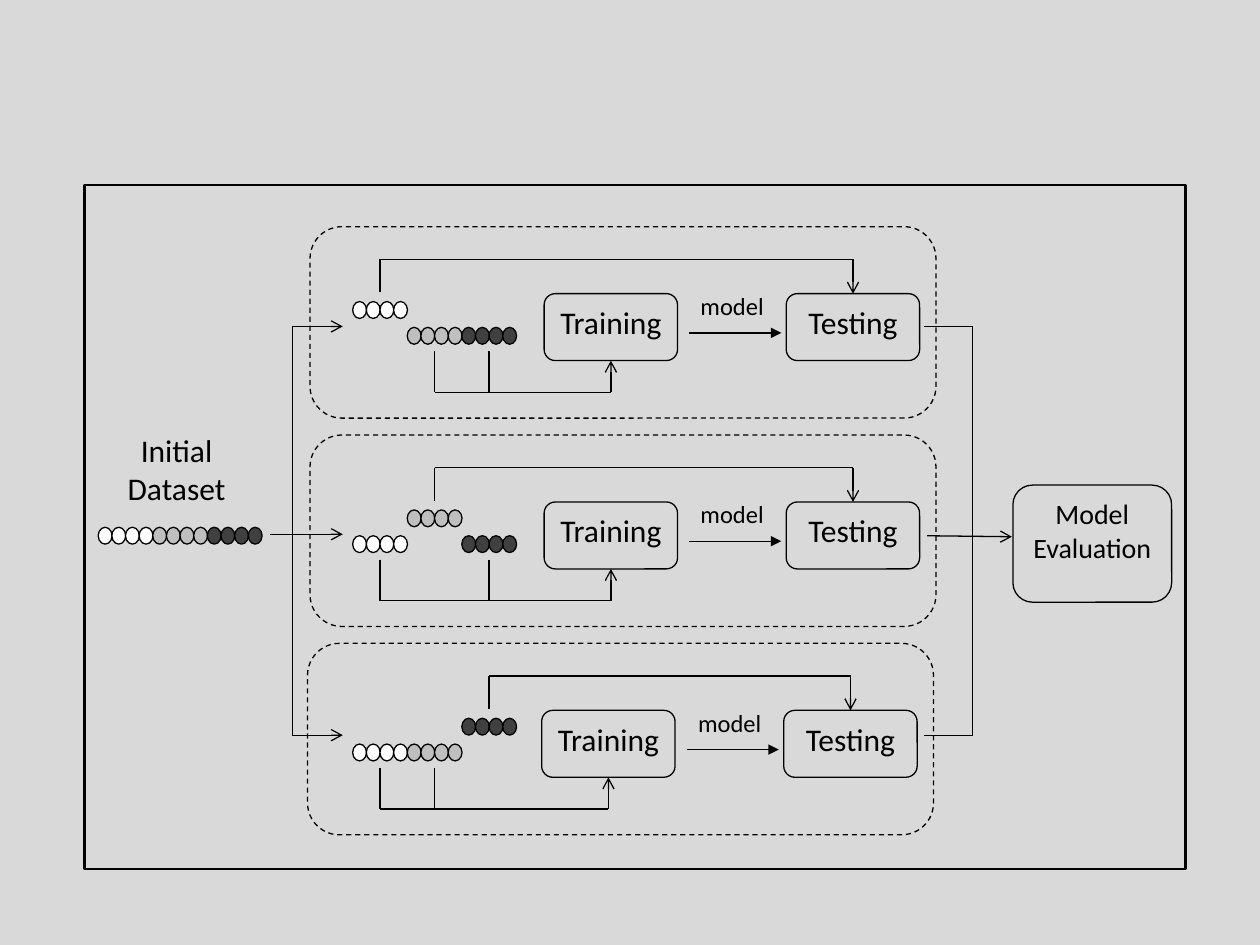
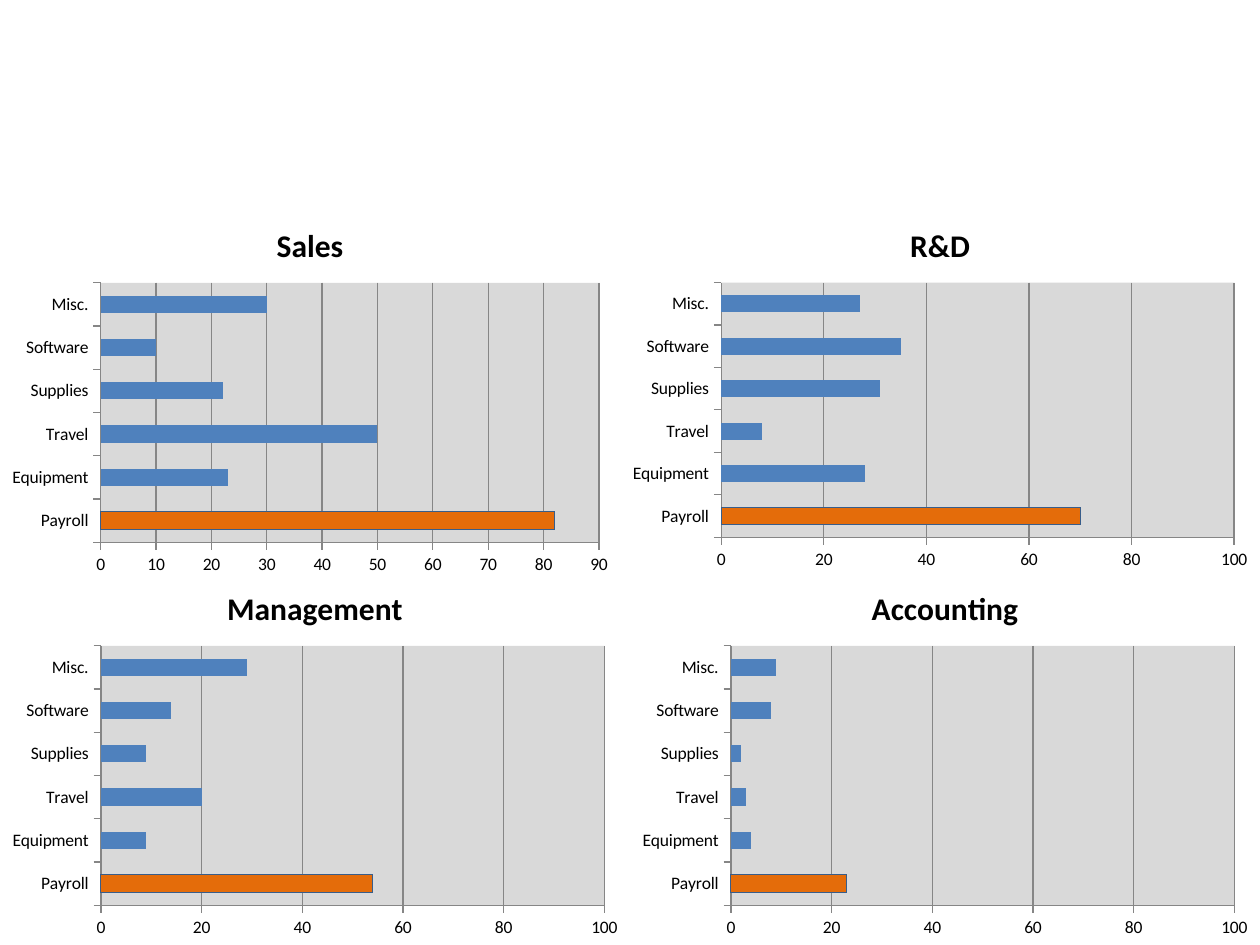
"""Build two slides: a three-fold cross-validation diagram and four budget bar charts."""
from dataclasses import dataclass
from typing import NamedTuple, Optional

from lxml import etree
from pptx import Presentation
from pptx import util as u
from pptx.chart.data import CategoryChartData
from pptx.dml.color import RGBColor
from pptx.enum import chart as charts
from pptx.enum import dml, shapes, text
from pptx.oxml.ns import qn


@dataclass(frozen=True)
class Theme:
    font: str = "Calibri"
    ink: RGBColor = RGBColor(0x00, 0x00, 0x00)
    paper: RGBColor = RGBColor(0xFF, 0xFF, 0xFF)
    panel: RGBColor = RGBColor(0xD9, 0xD9, 0xD9)
    silver: RGBColor = RGBColor(0xBF, 0xBF, 0xBF)
    charcoal: RGBColor = RGBColor(0x40, 0x40, 0x40)
    grid: RGBColor = RGBColor(0x86, 0x86, 0x86)
    bar: RGBColor = RGBColor(0x4F, 0x81, 0xBD)
    highlight: RGBColor = RGBColor(0xE4, 0x6C, 0x0A)
    highlight_edge: RGBColor = RGBColor(0x38, 0x5D, 0x8A)
    large: int = 18
    medium: int = 16
    small: int = 14
    axis: int = 10
    thin: float = 0.75
    thick: float = 1.5


class Box(NamedTuple):
    left: float
    top: float
    width: float
    height: float

    def lengths(self) -> list:
        return [u.Cm(value) for value in self]


class Fold(NamedTuple):
    held_out: int
    top: float
    shift: float


class Budget(NamedTuple):
    department: str
    box: Box
    values: tuple
    maximum: Optional[int] = 100


THEME = Theme()
BEAD_COLORS = (THEME.paper, THEME.silver, THEME.charcoal)
BEADS_PER_GROUP = 4
GROUP_PITCH = 1.1
BEAD_WIDTH, BEAD_HEIGHT = 0.28, 0.34
FOLD_BEADS_LEFT = 7.11
FOLD_TOP, FOLD_PITCH = 4.57, 4.2
FOLDS = [Fold(index, FOLD_TOP + index * FOLD_PITCH, shift)
         for index, shift in enumerate((0, 0, -0.05))]
CATEGORIES = ("Payroll", "Equipment", "Travel", "Supplies", "Software", "Misc.")
BUDGETS = (
    Budget("Sales", Box(0, 4.11, 12.5, 7.62), (82, 23, 50, 22, 10, 30), None),
    Budget("R&D", Box(12.5, 4.11, 12.9, 7.52), (70, 28, 8, 31, 35, 27)),
    Budget("Management", Box(0, 11.43, 12.7, 7.62), (54, 9, 20, 9, 14, 29)),
    Budget("Accounting", Box(12.7, 11.43, 12.7, 7.62), (23, 4, 3, 2, 8, 9)),
)


def add_slide(presentation, background: RGBColor):
    """Add a blank slide with a plain background."""
    slide = presentation.slides.add_slide(presentation.slide_layouts[6])
    slide.background.fill.solid()
    slide.background.fill.fore_color.rgb = background
    return slide


def set_text(shape, wording: str, size: int) -> None:
    """Put centred text at the top of a shape."""
    frame = shape.text_frame
    frame.text = wording
    frame.word_wrap = True
    frame.vertical_anchor = text.MSO_ANCHOR.TOP
    paragraph = frame.paragraphs[0]
    paragraph.alignment = text.PP_ALIGN.CENTER
    font = paragraph.runs[0].font
    font.name, font.size, font.color.rgb = THEME.font, u.Pt(size), THEME.ink


def add_outline(slide, kind, box: Box, fill: Optional[RGBColor] = None,
                width: float = THEME.thin):
    """Add a black-edged preset shape, filled or hollow."""
    shape = slide.shapes.add_shape(kind, *box.lengths())
    shape.shadow.inherit = False
    if fill is None:
        shape.fill.background()
    else:
        shape.fill.solid()
        shape.fill.fore_color.rgb = fill
    shape.line.color.rgb = THEME.ink
    shape.line.width = u.Pt(width)
    return shape


def add_step(slide, wording: str, box: Box, size: int = THEME.large):
    """Add a rounded process box."""
    shape = add_outline(slide, shapes.MSO_SHAPE.ROUNDED_RECTANGLE, box)
    set_text(shape, wording, size)
    return shape


def add_label(slide, wording: str, box: Box, size: int) -> None:
    """Add a free-standing label."""
    set_text(slide.shapes.add_textbox(*box.lengths()), wording, size)


def add_line(slide, start: tuple, end: tuple, head: Optional[str] = None):
    """Add a straight line, with an arrowhead at its end if one is named."""
    connector = slide.shapes.add_connector(
        shapes.MSO_CONNECTOR.STRAIGHT, *(u.Cm(value) for value in start + end))
    connector.line.color.rgb = THEME.ink
    connector.line.width = u.Pt(THEME.thin)
    properties = connector.element.spPr
    if head:
        etree.SubElement(properties.find(qn("a:ln")), qn("a:tailEnd"), type=head)
    etree.SubElement(properties, qn("a:effectLst"))
    return connector


def add_beads(slide, group: int, left: float, top: float) -> None:
    """Add one group's beads within a row that starts at left."""
    for bead in range(BEADS_PER_GROUP):
        offset = (group + bead / BEADS_PER_GROUP) * GROUP_PITCH
        box = Box(left + offset, top, BEAD_WIDTH, BEAD_HEIGHT)
        add_outline(slide, shapes.MSO_SHAPE.OVAL, box, BEAD_COLORS[group])


def add_fold(slide, fold: Fold) -> None:
    """Add one fold: its beads, steps and the routes between them."""
    top, shift = fold.top, fold.shift
    frame = add_outline(slide, shapes.MSO_SHAPE.ROUNDED_RECTANGLE,
                        Box(6.25 + shift, top, 12.62, 3.86))
    frame.line.dash_style = dml.MSO_LINE.DASH
    training_box = Box(10.97 + shift, top + 1.35, 2.69, 1.35)
    testing_box = training_box._replace(left=15.85 + shift)
    training = add_step(slide, "Training", training_box)
    testing = add_step(slide, "Testing", testing_box)
    training_x = training_box.left + training_box.width / 2
    testing_x = testing_box.left + testing_box.width / 2
    upper, lower = top + 0.66, top + 3.34

    centers = [FOLD_BEADS_LEFT + (group + 0.5) * GROUP_PITCH
               for group in range(len(BEAD_COLORS))]
    for group, center in enumerate(centers):
        held_out = group == fold.held_out
        add_beads(slide, group, FOLD_BEADS_LEFT, top + (1.51 if held_out else 2.03))
        if held_out:
            add_line(slide, (center, upper), (center, top + 1.32))
        else:
            add_line(slide, (center, top + 2.51), (center, lower))

    first_kept = min(set(range(len(centers))) - {fold.held_out})
    add_line(slide, (centers[first_kept], lower), (training_x, lower))
    add_line(slide, (training_x, lower), (training_x, top + 2.7),
             "arrow").end_connect(training, 2)
    add_line(slide, (centers[fold.held_out], upper), (testing_x, upper))
    add_line(slide, (testing_x, upper), (testing_x, top + 1.35),
             "arrow").end_connect(testing, 0)
    add_line(slide, (13.89 + shift, top + 2.14), (15.75 + shift, top + 2.14), "triangle")
    add_label(slide, "model", Box(13.64 + shift, top + 1.17, 2.24, 1.17), THEME.small)


def build_validation_slide(presentation) -> None:
    """Draw the cross-validation diagram."""
    slide = add_slide(presentation, THEME.panel)
    add_outline(slide, shapes.MSO_SHAPE.RECTANGLE, Box(1.7, 3.73, 22.2, 13.79),
                width=THEME.thick)
    add_label(slide, "Initial Dataset", Box(1.96, 8.56, 3.2, 2.06), THEME.large)
    for group in range(len(BEAD_COLORS)):
        add_beads(slide, group, 1.98, 10.63)
    for fold in FOLDS:
        add_fold(slide, fold)
    add_step(slide, "Model Evaluation", Box(20.42, 9.78, 3.2, 2.36), THEME.medium)

    split_x, merge_x, first_y, last_y = 5.89, 19.61, 6.58, 14.82
    for trunk_x in (split_x, merge_x):
        add_line(slide, (trunk_x, first_y), (trunk_x, last_y))
    for branch_y in (first_y, last_y):
        add_line(slide, (split_x, branch_y), (6.91, branch_y), "arrow")
        add_line(slide, (18.63, branch_y), (merge_x, branch_y))
    add_line(slide, (5.44, 10.77), (6.91, 10.77), "arrow")
    add_line(slide, (18.69, 10.8), (20.4, 10.82), "arrow")


def style_axis(axis) -> None:
    """Give an axis grey lines and outside ticks."""
    axis.major_tick_mark = charts.XL_TICK_MARK.OUTSIDE
    axis.minor_tick_mark = charts.XL_TICK_MARK.NONE
    axis.format.line.color.rgb = THEME.grid
    axis.format.line.width = u.Pt(THEME.thin)


def fill_plot_area(chart) -> None:
    """Fill the plot area with the panel colour."""
    plot_area = chart.element.find(".//" + qn("c:plotArea"))
    properties = etree.SubElement(plot_area, qn("c:spPr"))
    fill = etree.SubElement(properties, qn("a:solidFill"))
    etree.SubElement(fill, qn("a:srgbClr"), val=str(THEME.panel))


def add_budget_chart(slide, budget: Budget) -> None:
    """Add a department's bar chart with payroll highlighted."""
    data = CategoryChartData()
    data.categories = CATEGORIES
    data.add_series(budget.department, budget.values)
    chart = slide.shapes.add_chart(charts.XL_CHART_TYPE.BAR_CLUSTERED,
                                   *budget.box.lengths(), data).chart
    chart.font.name, chart.font.size = THEME.font, u.Pt(THEME.axis)
    chart.font.color.rgb = THEME.ink
    chart.has_legend = False
    chart.has_title = True
    title = chart.chart_title.text_frame
    title.text = budget.department
    font = title.paragraphs[0].runs[0].font
    font.name, font.size, font.bold = THEME.font, u.Pt(THEME.large), True
    font.color.rgb = THEME.ink

    style_axis(chart.category_axis)
    value_axis = chart.value_axis
    style_axis(value_axis)
    value_axis.has_major_gridlines = True
    value_axis.major_gridlines.format.line.color.rgb = THEME.grid
    value_axis.major_gridlines.format.line.width = u.Pt(THEME.thin)
    if budget.maximum is not None:
        value_axis.maximum_scale = budget.maximum
        value_axis.major_unit = 20

    plot = chart.plots[0]
    plot.gap_width = 150
    plot.vary_by_categories = False
    series = plot.series[0]
    series.format.fill.solid()
    series.format.fill.fore_color.rgb = THEME.bar
    payroll = series.points[0].format
    payroll.fill.solid()
    payroll.fill.fore_color.rgb = THEME.highlight
    payroll.line.color.rgb = THEME.highlight_edge
    fill_plot_area(chart)


def build_budget_slide(presentation) -> None:
    """Draw the four department charts."""
    slide = add_slide(presentation, THEME.paper)
    for budget in BUDGETS:
        add_budget_chart(slide, budget)


def main() -> None:
    """Build and save the presentation."""
    presentation = Presentation()
    presentation.slide_width, presentation.slide_height = u.Cm(25.4), u.Cm(19.05)
    build_validation_slide(presentation)
    build_budget_slide(presentation)
    presentation.save("out.pptx")


if __name__ == "__main__":
    main()
